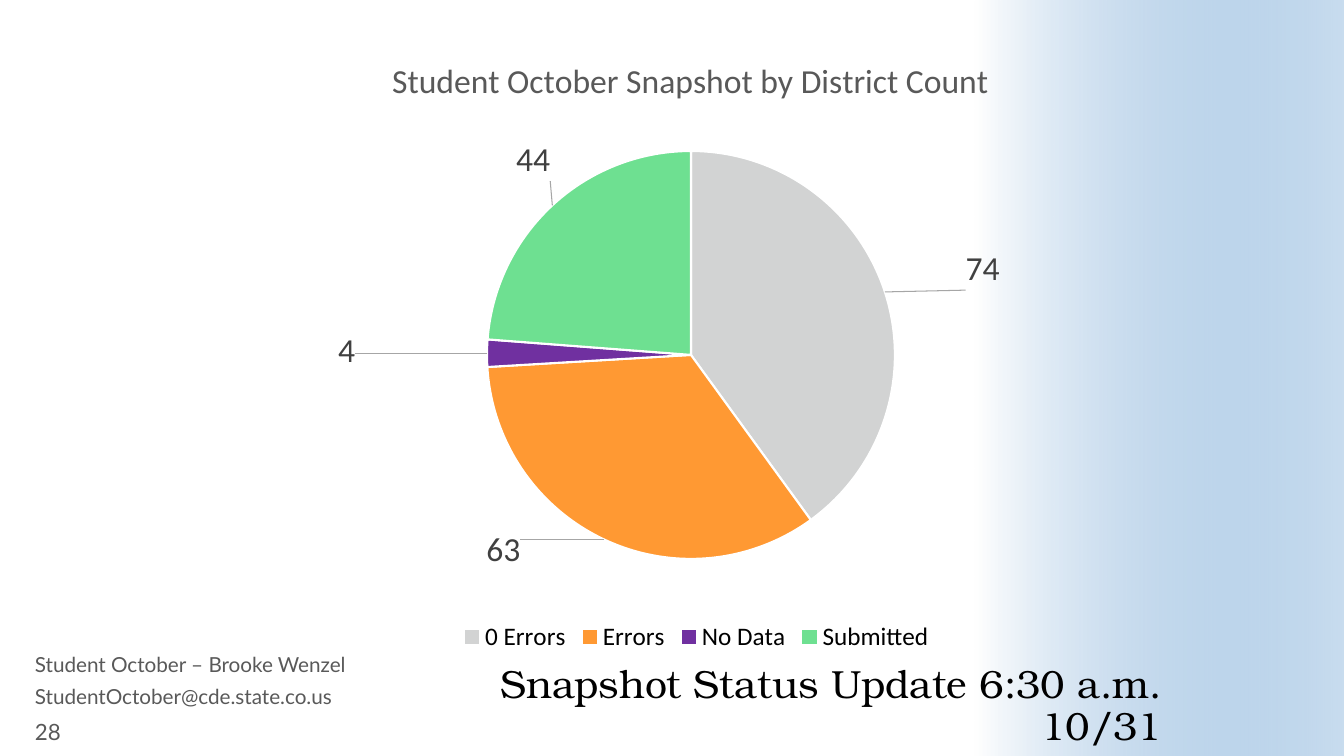
from lxml import etree
from pptx import Presentation
from pptx.chart.data import CategoryChartData
from pptx.dml.color import RGBColor
from pptx.enum.chart import XL_CHART_TYPE, XL_LABEL_POSITION, XL_LEGEND_POSITION
from pptx.enum.shapes import MSO_SHAPE
from pptx.enum.text import MSO_ANCHOR, PP_ALIGN
from pptx.oxml import parse_xml
from pptx.oxml.ns import nsdecls, qn
from pptx.util import Pt

PX = 12192000 / 1344  # EMU per px
COLORS = {
    "white": "FFFFFF", "band": "488BC9", "black": "000000",
    "grey": "595959", "label": "404040", "leader": "A6A6A6",
}
# category: value, slice colour, label shift in px
DISTRICTS = {
    "0 Errors": (74, "D2D3D3", (75, 0)),
    "Errors": (63, "FF9933", (-81, -15)),
    "No Data": (4, "7030A0", (-126, -2)),
    "Submitted": (44, "6EE091", (2, -20)),
}


def px(*lengths):
    return [round(n * PX) for n in lengths]


def rgb(name):
    return RGBColor.from_string(COLORS.get(name, name))


def set_font(font, name, size, color):
    font.name, font.size = name, Pt(size)
    font.bold = False
    font.color.rgb = rgb(color)


def add_text(s, box, text, font, size, color, align=PP_ALIGN.LEFT,
             anchor=MSO_ANCHOR.TOP, spacing=1.0, inset=None):
    tf = s.shapes.add_textbox(*px(*box)).text_frame
    tf.word_wrap = True
    tf.vertical_anchor = anchor
    if inset is not None:
        tf.margin_left = tf.margin_right = tf.margin_top = tf.margin_bottom = inset
    p = tf.paragraphs[0]
    p.text = text
    p.alignment, p.line_spacing = align, spacing
    set_font(p.font, font, size, color)


def add_band(s, box):
    """Blue fade down the right edge, turned to run from left to right."""
    sp = s.shapes.add_shape(MSO_SHAPE.RECTANGLE, *px(*box))
    sp.rotation = 270
    sp.shadow.inherit = False
    sp.line.fill.background()
    sp.fill.gradient()
    sp.fill.gradient_angle = 270
    for stop, name in zip(sp.fill.gradient_stops, ("white", "band")):
        stop.color.rgb = rgb(name)
    clr = sp._element.spPr.findall(".//" + qn("a:srgbClr"))[-1]
    etree.SubElement(clr, qn("a:alpha")).set("val", "30000")


def layout_xml(**values):
    items = "".join(f'<c:{k} val="{v}"/>' for k, v in values.items())
    return parse_xml(f'<c:layout {nsdecls("c")}><c:manualLayout>{items}'
                     "</c:manualLayout></c:layout>")


def add_pie(s, box):
    left, top, width, height = box
    data = CategoryChartData()
    data.categories = list(DISTRICTS)
    data.add_series("Series 1", [value for value, _, _ in DISTRICTS.values()])
    chart = s.shapes.add_chart(XL_CHART_TYPE.PIE, *px(*box), data).chart
    set_font(chart.font, "Calibri", 10, "black")

    def share(x, y):
        return dict(x=round(x / width, 4), y=round(y / height, 4))

    # Title
    chart.has_title = True
    p = chart.chart_title.text_frame.paragraphs[0]
    p.text = "Student October Snapshot by District Count"
    set_font(p.font, "Calibri", 24, "grey")
    title = chart.chart_title._element
    for old in title.findall(qn("c:layout")):
        title.remove(old)
    title.find(qn("c:tx")).addnext(
        layout_xml(xMode="edge", yMode="edge", **share(336, 12)))

    # Legend
    chart.has_legend = True
    chart.legend.position = XL_LEGEND_POSITION.BOTTOM
    chart.legend.include_in_layout = False
    set_font(chart.legend.font, "Calibri", 18, "black")

    # Plot area
    area = chart._chartSpace.chart.plotArea
    for old in area.findall(qn("c:layout")):
        area.remove(old)
    size = share(408, 408)
    area.insert(0, layout_xml(layoutTarget="inner", xMode="edge", yMode="edge",
                              **share(487 - left, 151 - top),
                              w=size["x"], h=size["y"]))

    # Slices and their labels
    plot = chart.plots[0]
    plot.vary_by_categories = True
    series = plot.series[0]
    labels = series.data_labels
    labels.show_value = True
    labels.position = XL_LABEL_POSITION.OUTSIDE_END
    set_font(labels.font, "Calibri", 24, "label")
    for i, (_, color, shift) in enumerate(DISTRICTS.values()):
        point = series.points[i]
        point.format.fill.solid()
        point.format.fill.fore_color.rgb = rgb(color)
        point.format.line.color.rgb = rgb("white")
        point.format.line.width = Pt(1.5)
        set_font(point.data_label.font, "Calibri", 24, "label")
        point.data_label.position = XL_LABEL_POSITION.OUTSIDE_END
        label = labels._element.findall(qn("c:dLbl"))[i]
        label.find(qn("c:idx")).addnext(layout_xml(**share(*shift)))

    # Leader lines
    for old in labels._element.findall(qn("c:showLeaderLines")):
        labels._element.remove(old)
    labels._element.append(parse_xml(f'<c:showLeaderLines {nsdecls("c")} val="1"/>'))
    labels._element.append(parse_xml(
        f'<c:leaderLines {nsdecls("c", "a")}><c:spPr><a:ln w="9525"><a:solidFill>'
        f'<a:srgbClr val="{COLORS["leader"]}"/></a:solidFill></a:ln></c:spPr>'
        "</c:leaderLines>"))


def add_footer(s, box):
    """Contact lines with the slide number below them."""
    left, top, width, row = box
    for i, text in enumerate(("Student October – Brooke Wenzel",
                              "StudentOctober@cde.state.co.us")):
        add_text(s, (left, top + i * row, width, row), text,
                 "Lato", 14.8, "grey", spacing=0.8)
    add_text(s, (left, top + 2 * row, 86, row), "28", "Lato", 16, "grey",
             anchor=MSO_ANCHOR.MIDDLE)


def main():
    prs = Presentation()
    prs.slide_width, prs.slide_height = px(1344, 756)
    s = prs.slides.add_slide(prs.slide_layouts[6])
    add_band(s, (781, 194, 756, 369))
    add_text(s, (432, 650, 730, 99), "Snapshot Status Update 6:30 a.m. 10/31",
             "TeX Gyre Bonum", 28, "black", PP_ALIGN.RIGHT,
             MSO_ANCHOR.BOTTOM, 0.9, 0)
    add_pie(s, (50, 40, 1293, 617))
    add_footer(s, (25, 652, 392, 32))
    prs.save("out.pptx")


if __name__ == "__main__":
    main()
